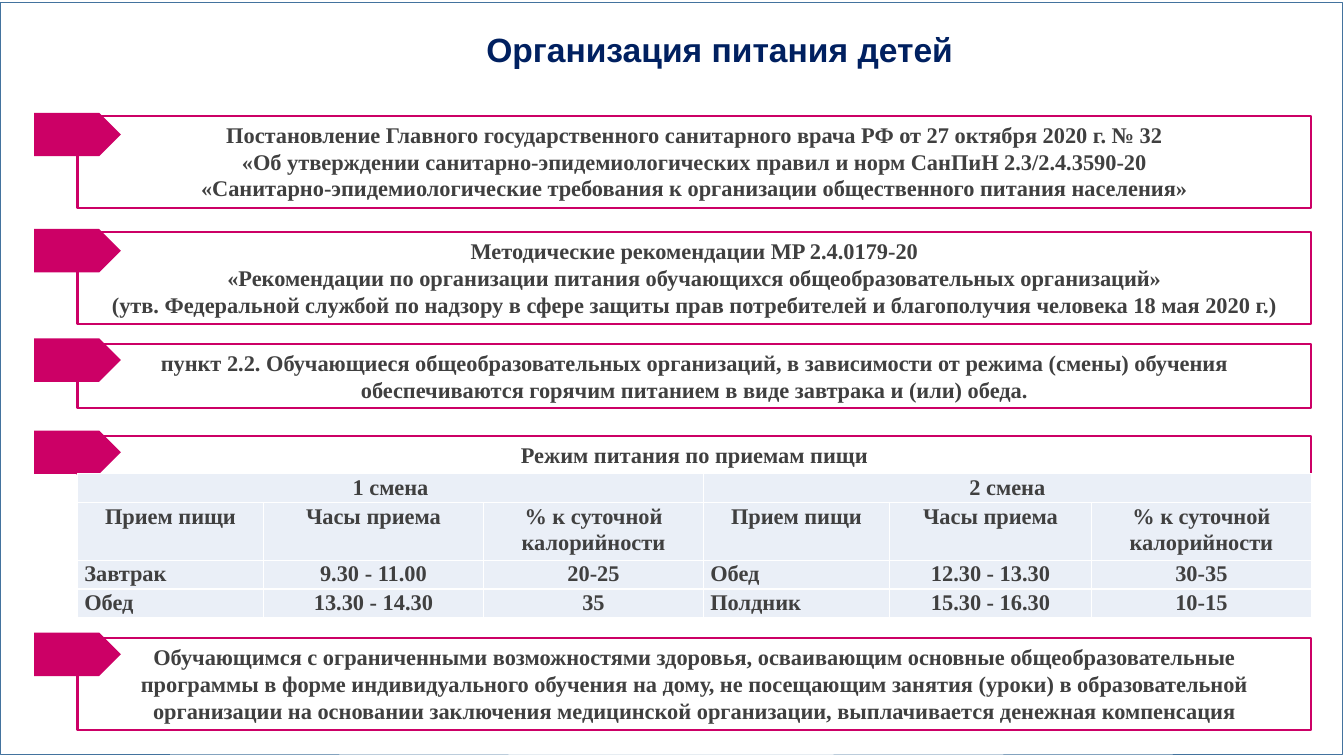
import copy

import pptx
import pptx.dml.color
import pptx.enum.shapes
import pptx.enum.text
import pptx.util

Pt = pptx.util.Pt
RGB = pptx.dml.color.RGBColor
SHAPE = pptx.enum.shapes.MSO_SHAPE
ALIGN = pptx.enum.text.PP_ALIGN
ANCHOR = pptx.enum.text.MSO_ANCHOR

PINK = RGB(0xCC, 0x00, 0x66)
NAVY = RGB(0x00, 0x20, 0x60)
GREY = RGB(0x40, 0x40, 0x40)
FRAME = RGB(0x43, 0x73, 0x9E)
PALE = RGB(0xEA, 0xEF, 0xF7)

LEFT, WIDTH = 55.4, 881.3
TAG_SIZE = 61.9, 31

BOXES = [
    (82.8, 65.5, 2.2, [
        "Постановление Главного государственного санитарного врача РФ от 27 октября 2020 г. № 32\v"
        "«Об утверждении санитарно-эпидемиологических правил и норм СанПиН 2.3/2.4.3590-20",
        "«Санитарно-эпидемиологические требования к организации общественного питания населения»"]),
    (165.8, 65.5, 2.2, [
        "Методические рекомендации MP 2.4.0179-20\v"
        "«Рекомендации по организации питания обучающихся общеобразовательных организаций»\v"
        "(утв. Федеральной службой по надзору в сфере защиты прав потребителей "
        "и благополучия человека 18 мая 2020 г.)"]),
    (245.7, 46, 4, [
        "пункт 2.2. Обучающиеся общеобразовательных организаций, в зависимости от режима (смены) "
        "обучения обеспечиваются горячим питанием в виде завтрака и (или) обеда."]),
    (311.6, 26.7, 4, ["Режим питания по приемам пищи"]),
    (455.9, 65.5, 4, [
        "Обучающимся с ограниченными возможностями здоровья, осваивающим основные общеобразовательные",
        "программы в форме индивидуального обучения на дому, не посещающим занятия (уроки) "
        "в образовательной организации на основании заключения медицинской организации, "
        "выплачивается денежная компенсация"]),
]

HEADS = ["Прием пищи", "Часы приема", "% к суточной калорийности"]
MEALS = [
    ["1 смена", "", "", "2 смена", "", ""],
    HEADS * 2,
    ["Завтрак", "9.30 - 11.00", "20-25", "Обед", "12.30 - 13.30", "30-35"],
    ["Обед", "13.30 - 14.30", "35", "Полдник", "15.30 - 16.30", "10-15"],
]
COLUMNS = [132.8, 157.2, 157.2, 132.8, 144.4, 156.9]
ROWS = [20.6, 41.2, 20.6, 20.6]


def write(tf, texts, size=16, font="Times New Roman", color=GREY, align=ALIGN.CENTER, spacing=None):
    """Fill a text frame with bold paragraphs; a vertical tab breaks a line."""
    for i, text in enumerate(texts):
        p = tf.add_paragraph() if i else tf.paragraphs[0]
        p.text = text
        p.alignment = align
        if spacing:
            p.line_spacing = spacing
        for r in p.runs:
            r.font.size, r.font.name, r.font.bold = Pt(size), font, True
            r.font.color.rgb = color
        for br in p._p.br_lst if hasattr(p._p, "br_lst") else p._p.xpath("a:br"):
            br.append(copy.deepcopy(p.runs[0].font._rPr))


def add_block(s, kind, x, y, w, h, fill=None, line=None, weight=1.5):
    """Add a flat preset shape with an optional fill and outline."""
    sp = s.shapes.add_shape(kind, Pt(x), Pt(y), Pt(w), Pt(h))
    sp.shadow.inherit = False
    for part, color in ((sp.fill, fill), (sp.line.fill, line)):
        if color is None:
            part.background()
        else:
            part.solid()
            part.fore_color.rgb = color
    if line is not None:
        sp.line.width = Pt(weight)
    return sp


def add_title(s, x, y, w, h):
    """Place the slide title in the given box."""
    sp = s.shapes.title
    sp.left, sp.top, sp.width, sp.height = Pt(x), Pt(y), Pt(w), Pt(h)
    tf = sp.text_frame
    tf.margin_left = tf.margin_right = tf.margin_top = tf.margin_bottom = Pt(2.9)
    tf.vertical_anchor = ANCHOR.MIDDLE
    write(tf, ["Организация питания детей"], size=24, font="Arial", color=NAVY, spacing=0.9)


def add_tagged_box(s, x, y, w, h, rise, texts):
    """Place an outlined text box with a pentagon tag over its top left corner."""
    sp = add_block(s, SHAPE.RECTANGLE, x, y, w, h, line=PINK)
    tf = sp.text_frame
    tf.word_wrap = True
    tf.auto_size = pptx.enum.text.MSO_AUTO_SIZE.SHAPE_TO_FIT_TEXT
    tf.vertical_anchor = ANCHOR.TOP
    write(tf, texts)
    add_block(s, SHAPE.PENTAGON, x - TAG_SIZE[0] / 2, y - rise, *TAG_SIZE, fill=PINK)


def add_meals(s, x, y, w, h):
    """Place the table of meals for the two shifts."""
    table = s.shapes.add_table(len(ROWS), len(COLUMNS), Pt(x), Pt(y), Pt(w), Pt(h)).table
    table.first_row = table.horz_banding = False
    for column, width in zip(table.columns, COLUMNS):
        column.width = Pt(width)
    for row, height in zip(table.rows, ROWS):
        row.height = Pt(height)
    for first in (0, 3):
        table.cell(0, first).merge(table.cell(0, first + 2))
    for i, texts in enumerate(MEALS):
        for j, text in enumerate(texts):
            cell = table.cell(i, j)
            cell.fill.solid()
            cell.fill.fore_color.rgb = PALE
            cell.margin_left = cell.margin_right = Pt(4.9)
            cell.margin_top = cell.margin_bottom = 0
            if text:
                align = ALIGN.LEFT if i > 1 and j % 3 == 0 else ALIGN.CENTER
                write(cell.text_frame, [text], align=align, spacing=1.07)


def main():
    """Build the slide and save it."""
    prs = pptx.Presentation()
    prs.slide_width, prs.slide_height = Pt(960), Pt(540)
    s = prs.slides.add_slide(prs.slide_layouts[5])
    add_block(s, SHAPE.RECTANGLE, 0, 1.4, 958.5, 537.1, line=FRAME, weight=0.25)
    add_title(s, 90.7, 4.3, 846.7, 65.5)
    for y, h, rise, texts in BOXES:
        add_tagged_box(s, LEFT, y, WIDTH, h, rise, texts)
    add_meals(s, LEFT, 338.4, WIDTH, sum(ROWS))
    prs.save("out.pptx")


if __name__ == "__main__":
    main()
